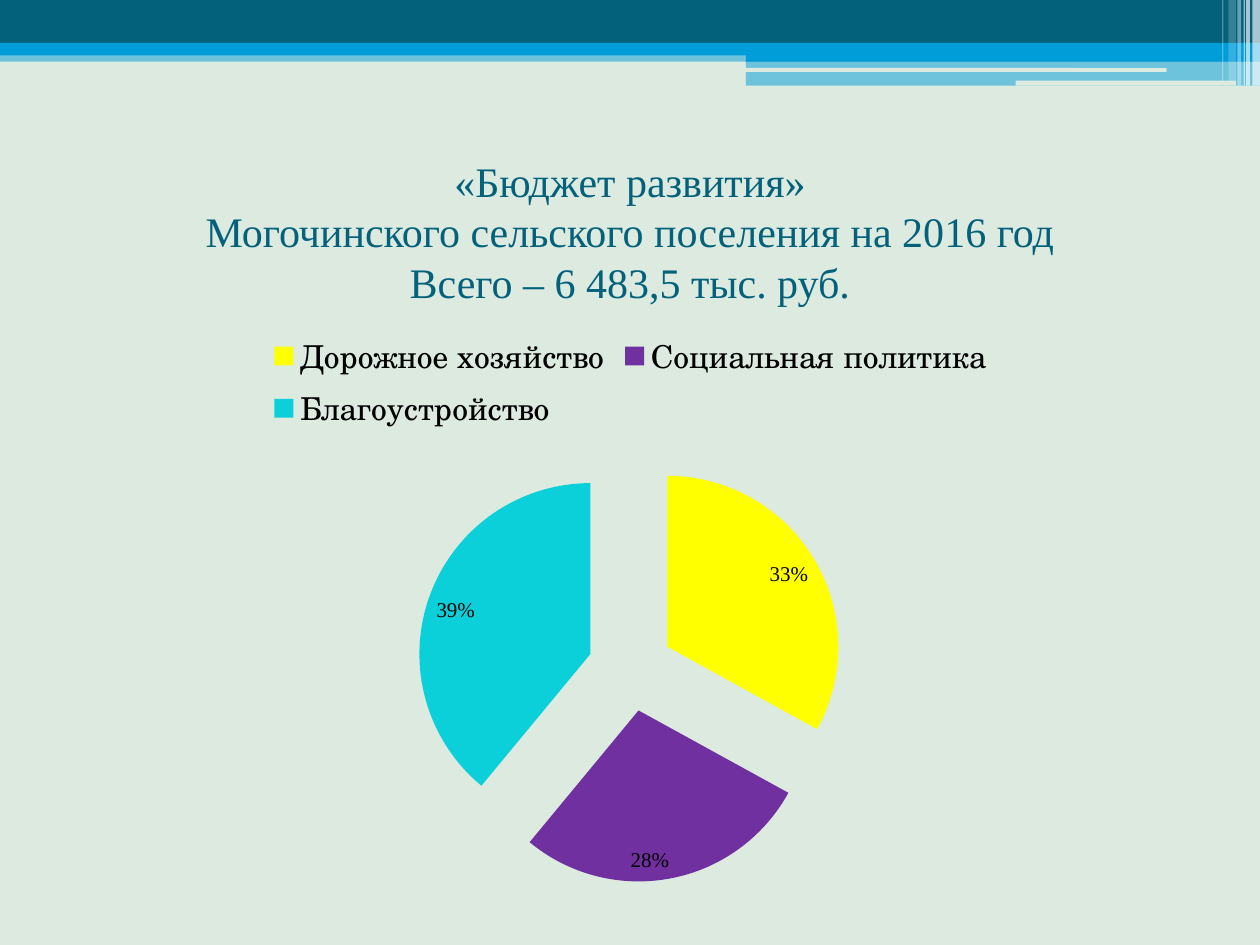
import pptx
import pptx.util
import pptx.chart.data
import pptx.dml.color
import pptx.enum.chart
import pptx.enum.shapes
import pptx.enum.text
import pptx.oxml.ns
import lxml.etree

THEME = {
    "back": "DCEAE0", "dark": "04617B", "blue": "009DD9", "white": "FFFFFF", "black": "000000",
    "slices": ["FFFF00", "7030A0", "0BD0D9"],
    "title_font": "Times New Roman", "chart_font": "TeX Gyre Schola",
    "title_size": 24, "legend_size": 18, "label_size": 12,
}
COLS, ROWS = 100, 75

prs = pptx.Presentation()
prs.slide_width = pptx.util.Inches(10)
prs.slide_height = pptx.util.Inches(7.5)
s = prs.slides.add_slide(prs.slide_layouts[6])


def box(x, y, w, h):
    col, row = prs.slide_width / COLS, prs.slide_height / ROWS
    return int(x * col), int(y * row), int(w * col), int(h * row)


def paint(fill, color, alpha=100):
    fill.solid()
    fill.fore_color.rgb = pptx.dml.color.RGBColor.from_string(color)
    if alpha < 100:
        clr = fill._xPr.find(".//" + pptx.oxml.ns.qn("a:srgbClr"))
        lxml.etree.SubElement(clr, pptx.oxml.ns.qn("a:alpha")).set("val", str(alpha * 1000))


paint(s.background.fill, THEME["back"])

RECT = pptx.enum.shapes.MSO_SHAPE.RECTANGLE
ROUND = pptx.enum.shapes.MSO_SHAPE.ROUNDED_RECTANGLE
bands = [
    (RECT, 0, 4, 100, 0.9, "blue", 50),
    (RECT, 0, 0, 100, 3.4, "dark", 100),
    (RECT, 0, 3.4, 100, 1, "blue", 100),
    (RECT, 59.2, 3.9, 40.8, 1, "blue", 100),
    (RECT, 59.2, 4.8, 40.8, 2, "blue", 50),
    (ROUND, 59.1, 5.4, 33.5, 0.3, "back", 100),
    (ROUND, 80.6, 6.4, 17.5, 0.4, "back", 100),
]
stripes = [(99.4, 0.6, 6.8, 65), (98.9, 0.3, 6.8, 65), (98.7, 0.1, 6.8, 60),
           (98.2, 0.3, 6.8, 40), (97.5, 0.6, 6.4, 20), (97, 0.1, 6.4, 30)]
bands += [(RECT, x, 0, w, h, "white", alpha) for x, w, h, alpha in stripes]
for kind, x, y, w, h, color, alpha in bands:
    sp = s.shapes.add_shape(kind, *box(x, y, w, h))
    sp.shadow.inherit = False
    sp.line.fill.background()
    paint(sp.fill, THEME[color], alpha)

data = pptx.chart.data.CategoryChartData()
data.categories = ["Дорожное хозяйство", "Социальная политика", "Благоустройство"]
data.add_series("Series 1", [33, 28, 39])
chart = s.shapes.add_chart(
    pptx.enum.chart.XL_CHART_TYPE.PIE, *box(5.6, 25.2, 88.9, 46.2), data).chart
chart.has_title = False
chart.font.name = THEME["chart_font"]
chart.font.size = pptx.util.Pt(THEME["legend_size"])
chart.font.color.rgb = pptx.dml.color.RGBColor.from_string(THEME["black"])
chart.has_legend = True
chart.legend.position = pptx.enum.chart.XL_LEGEND_POSITION.TOP
chart.legend.include_in_layout = False

plot = chart.plots[0]
plot.vary_by_categories = True
ser = plot.series[0]
explosion = lxml.etree.Element(pptx.oxml.ns.qn("c:explosion"))
explosion.set("val", "25")
ser._element.find(pptx.oxml.ns.qn("c:tx")).addnext(explosion)
for i, color in enumerate(THEME["slices"]):
    paint(ser.points[i].format.fill, color)

plot.has_data_labels = True
labels = plot.data_labels
labels.show_value = False
labels.show_percentage = True
labels.number_format = "0%"
labels.number_format_is_linked = False
labels.position = pptx.enum.chart.XL_LABEL_POSITION.INSIDE_END
labels.font.name = THEME["title_font"]
labels.font.size = pptx.util.Pt(THEME["label_size"])
labels.font.color.rgb = pptx.dml.color.RGBColor.from_string(THEME["black"])

tf = s.shapes.add_textbox(*box(5, 12.5, 90, 11.7)).text_frame
tf.word_wrap = True
tf.vertical_anchor = pptx.enum.text.MSO_ANCHOR.MIDDLE
p = tf.paragraphs[0]
p.alignment = pptx.enum.text.PP_ALIGN.CENTER
lines = ["«Бюджет развития»", "Могочинского сельского поселения на 2016 год",
         "Всего – 6 483,5 тыс. руб."]
for i, line in enumerate(lines):
    if i:
        p.add_line_break()
    r = p.add_run()
    r.text = line
    r.font.name = THEME["title_font"]
    r.font.size = pptx.util.Pt(THEME["title_size"])
    r.font.color.rgb = pptx.dml.color.RGBColor.from_string(THEME["dark"])

prs.save("out.pptx")
